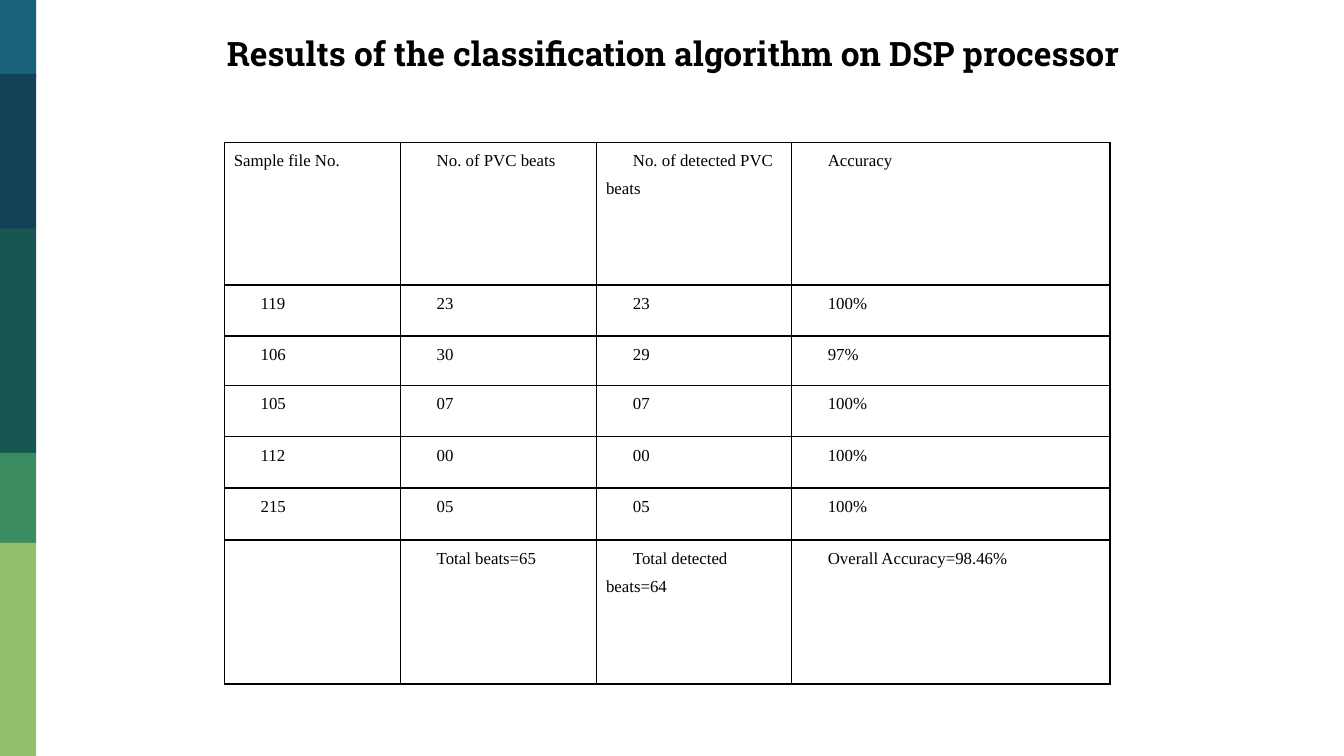
import pptx
import pptx.dml.color
import pptx.enum.shapes
import pptx.enum.text
import pptx.oxml
import pptx.oxml.ns
import pptx.util
from pptx.util import Inches

# Sidebar bands: top, height, colour
BANDS = [
    (0, 0.58, "18637B"),
    (0.55, 1.16, "124057"),
    (1.7, 1.68, "165751"),
    (3.37, 0.67, "3B8D61"),
    (4.04, 1.59, "94BF6E"),
]

RESULTS = [
    ["Sample file No.", "No. of PVC beats", "No. of detected PVC beats", "Accuracy"],
    ["119", "23", "23", "100%"],
    ["106", "30", "29", "97%"],
    ["105", "07", "07", "100%"],
    ["112", "00", "00", "100%"],
    ["215", "05", "05", "100%"],
    ["", "Total beats=65", "Total detected beats=64", "Overall Accuracy=98.46%"],
]
COLUMN_WIDTHS = [1.31, 1.46, 1.45, 2.37]
ROW_HEIGHTS = [1.06, 0.38, 0.37, 0.38, 0.38, 0.39, 1.07]


def color(code):
    return pptx.dml.color.RGBColor.from_string(code)


def write(para, text, *, font, size, bold=False, align=None):
    para.alignment = align
    span = para.add_run()
    span.text = text
    span.font.name = font
    span.font.size = pptx.util.Pt(size)
    span.font.bold = bold
    span.font.color.rgb = color("000000")


def add_band(page, top, height, fill):
    band = page.shapes.add_shape(
        pptx.enum.shapes.MSO_SHAPE.RECTANGLE,
        Inches(0), Inches(top), Inches(0.27), Inches(height))
    band.shadow.inherit = False
    band.fill.solid()
    band.fill.fore_color.rgb = color(fill)
    band.line.fill.background()


def add_title(page, text):
    box = page.shapes.add_textbox(Inches(1.08), Inches(0.23), Inches(7.92), Inches(0.33))
    frame = box.text_frame
    frame.word_wrap = True
    frame.vertical_anchor = pptx.enum.text.MSO_ANCHOR.MIDDLE
    frame.margin_left = frame.margin_right = Inches(0.1)
    frame.margin_top = frame.margin_bottom = Inches(0.1)
    write(frame.paragraphs[0], text, font="Roboto Slab", size=18, bold=True,
          align=pptx.enum.text.PP_ALIGN.CENTER)


def set_borders(cell, code, points):
    properties = cell._tc.get_or_add_tcPr()
    for side in ("lnL", "lnR", "lnT", "lnB"):
        properties.append(pptx.oxml.parse_xml(
            f'<a:{side} {pptx.oxml.ns.nsdecls("a")} w="{pptx.util.Pt(points)}">'
            f'<a:solidFill><a:srgbClr val="{code}"/></a:solidFill></a:{side}>'))


def fill_cell(cell, text, *, indent, align):
    cell.margin_left = cell.margin_right = Inches(0.07)
    cell.margin_top = cell.margin_bottom = 0
    set_borders(cell, "000000", 1)
    cell.fill.background()
    if not text:
        return
    para = cell.text_frame.paragraphs[0]
    para.line_spacing = 1.5
    para.space_after = pptx.util.Pt(6)
    para._p.get_or_add_pPr().set("indent", str(Inches(indent)))
    write(para, text, font="Times New Roman", size=9, align=align)


def add_results(page):
    table = page.shapes.add_table(
        len(RESULTS), len(COLUMN_WIDTHS), Inches(1.67), Inches(1.06),
        Inches(sum(COLUMN_WIDTHS)), Inches(sum(ROW_HEIGHTS))).table
    table.first_row = table.horz_banding = False
    for column, width in zip(table.columns, COLUMN_WIDTHS):
        column.width = Inches(width)
    for row, height in zip(table.rows, ROW_HEIGHTS):
        row.height = Inches(height)
    for r, texts in enumerate(RESULTS):
        for c, text in enumerate(texts):
            # Only the first heading is justified and not indented
            corner = r == c == 0
            align = pptx.enum.text.PP_ALIGN.JUSTIFY if corner else pptx.enum.text.PP_ALIGN.LEFT
            fill_cell(table.cell(r, c), text, indent=0 if corner else 0.2, align=align)


def main():
    # Widescreen page, 16:9
    deck = pptx.Presentation()
    deck.slide_width = Inches(10)
    deck.slide_height = Inches(10 * 9 / 16)
    page = deck.slides.add_slide(deck.slide_layouts[6])
    page.background.fill.solid()
    page.background.fill.fore_color.rgb = color("FFFFFF")

    # Sidebar
    for top, height, fill in BANDS:
        add_band(page, top, height, fill)

    # Title and table
    add_title(page, "Results of the classification algorithm on DSP processor ")
    add_results(page)

    deck.save("out.pptx")


if __name__ == "__main__":
    main()
